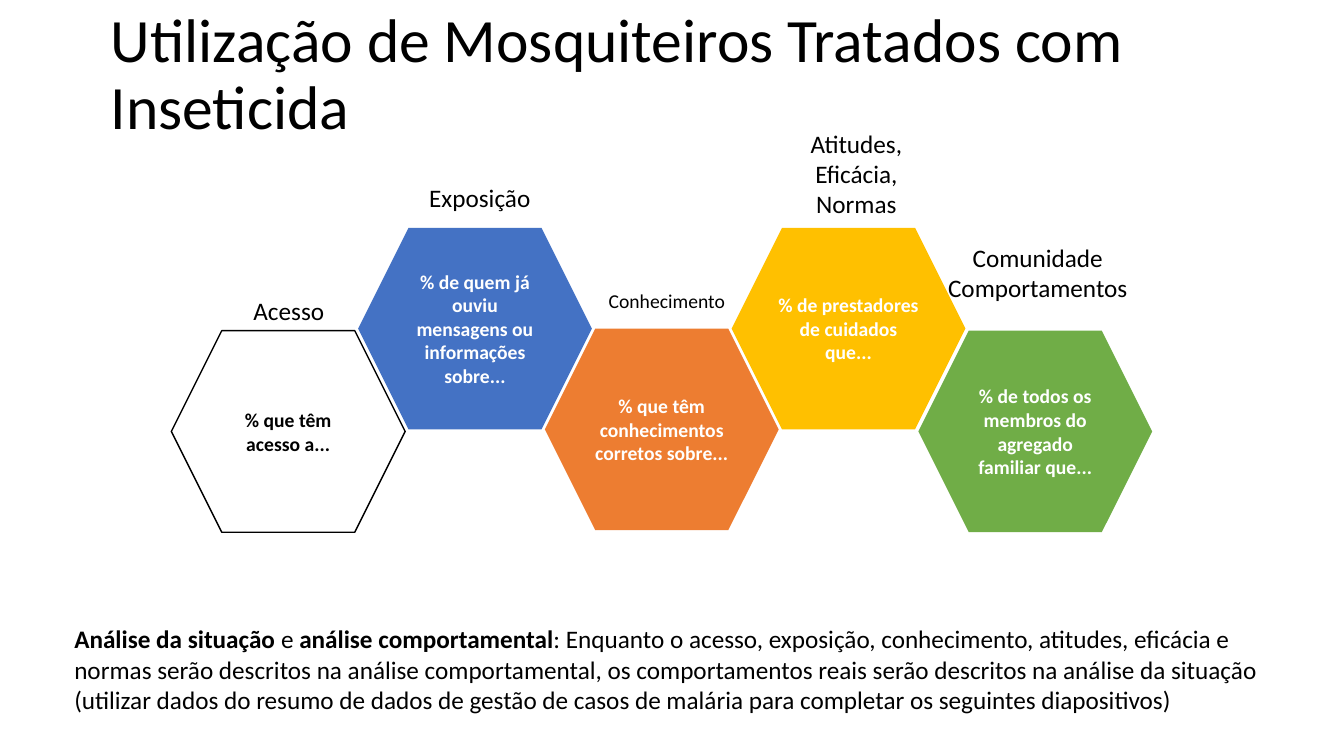
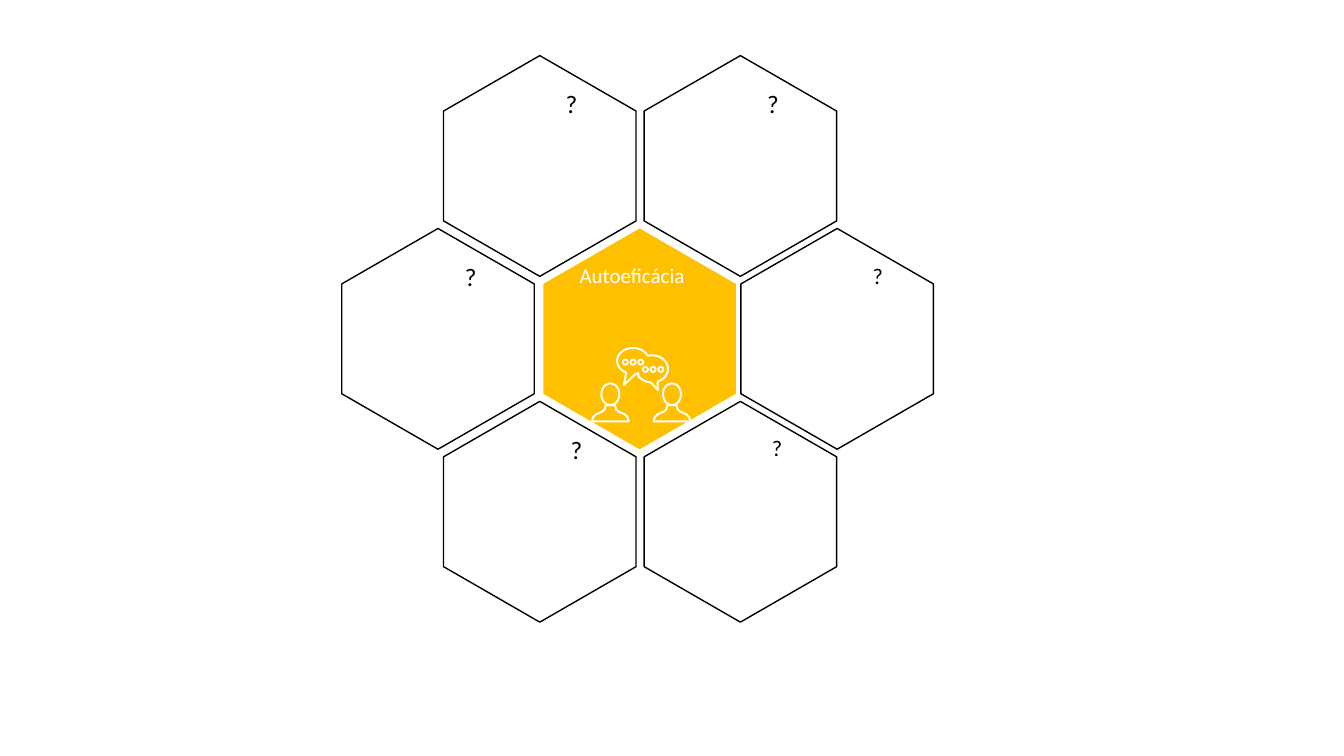
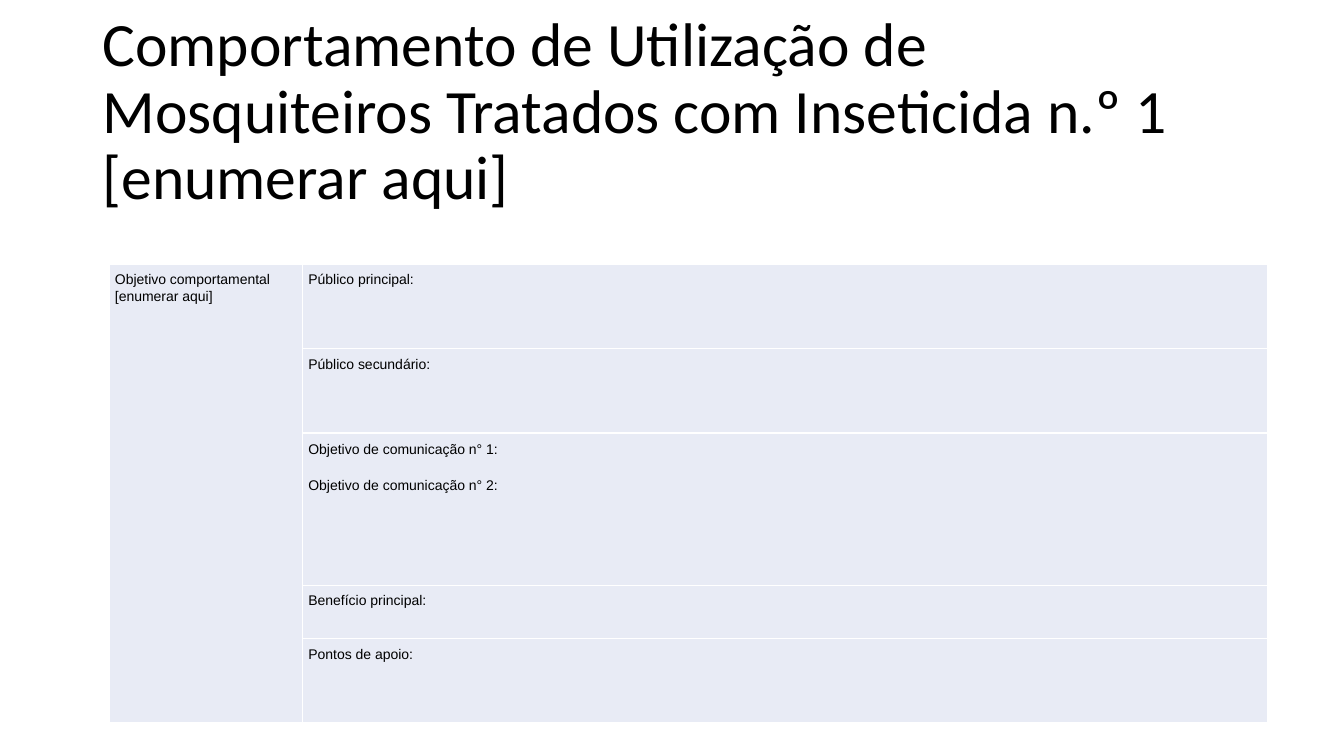
import math

import lxml.etree
import pptx
import pptx.dml.color
import pptx.enum.shapes
import pptx.enum.text
import pptx.oxml.ns
import pptx.util

Pt = pptx.util.Pt
SHAPE = pptx.enum.shapes.MSO_SHAPE
ALIGN = pptx.enum.text.PP_ALIGN
ANCHOR = pptx.enum.text.MSO_ANCHOR
COLORS = {
    "ink": "000000",
    "paper": "FFFFFF",
    "exposure": "4472C4",
    "knowledge": "ED7D31",
    "attitude": "FFC000",
    "community": "70AD47",
    "cell": "E8EBF5",
}


def rgb(name):
    return pptx.dml.color.RGBColor.from_string(COLORS[name])


def arc(cx, cy, rx, ry, start, end, steps=16):
    angles = [math.radians(start + (end - start) * i / steps) for i in range(steps + 1)]
    return [(cx + rx * math.cos(a), cy + ry * math.sin(a)) for a in angles]


class Deck:
    """Holds the shared style and the current slide."""

    def __init__(self):
        self.prs = pptx.Presentation()
        self.prs.slide_width, self.prs.slide_height = Pt(960), Pt(540)
        self.slide = None

    def new_slide(self):
        self.slide = self.prs.slides.add_slide(self.prs.slide_layouts[6])

    def style_run(self, run, size, color="ink", bold=False, font="Calibri"):
        run.font.name, run.font.size, run.font.bold = font, Pt(size), bold
        run.font.color.rgb = rgb(color)

    def fill_text(self, frame, text, size, align=ALIGN.LEFT, spacing=1.0, **style):
        frame.word_wrap = True
        frame.text = text
        for paragraph in frame.paragraphs:
            paragraph.alignment = align
            paragraph.line_spacing = spacing
            for run in paragraph.runs:
                self.style_run(run, size, **style)

    def text(self, box, text, size=18, anchor=ANCHOR.TOP, margins=None, **style):
        frame = self.slide.shapes.add_textbox(*map(Pt, box)).text_frame
        frame.vertical_anchor = anchor
        if margins:
            (frame.margin_left, frame.margin_top,
             frame.margin_right, frame.margin_bottom) = map(Pt, margins)
        self.fill_text(frame, text, size, **style)
        return frame

    def title(self, box, text):
        self.text(box, text, 44, ANCHOR.MIDDLE, spacing=0.9)

    def rich_text(self, box, pieces):
        paragraph = self.text(box, "").paragraphs[0]
        for content, bold in pieces:
            run = paragraph.add_run()
            run.text = content
            self.style_run(run, 18, bold=bold)

    def paint(self, shape, fill=None, line=None, width=1):
        shape.shadow.inherit = False
        if fill:
            shape.fill.solid()
            shape.fill.fore_color.rgb = rgb(fill)
        else:
            shape.fill.background()
        if line:
            shape.line.color.rgb = rgb(line)
            shape.line.width = Pt(width)
        else:
            shape.line.fill.background()

    def shape(self, kind, box, fill=None, line=None, width=1):
        shape = self.slide.shapes.add_shape(kind, *map(Pt, box))
        self.paint(shape, fill, line, width)
        return shape

    def hexagon(self, box, fill=None, text=None, upright=False):
        hexagon = self.shape(SHAPE.HEXAGON, box, fill, None if fill else "ink")
        if upright:
            hexagon.rotation = 90
            hexagon.adjustments[0] = 0.288
        if text:
            hexagon.text_frame.vertical_anchor = ANCHOR.MIDDLE
            self.fill_text(hexagon.text_frame, text, 14, ALIGN.CENTER,
                           color="paper" if fill else "ink", bold=True)

    def outline(self, points):
        points = [(round(x * 100), round(y * 100)) for x, y in points]
        builder = self.slide.shapes.build_freeform(*points[0], scale=Pt(1) / 100)
        builder.add_line_segments(points[1:], close=True)
        self.paint(builder.convert_to_shape(), None, "paper", 1.4)

    def person(self, left, top):
        self.shape(SHAPE.OVAL, (left + 7.6, top + 0.7, 12.8, 15.8), None, "paper", 1.4)
        half = [(10.6, 16.5), (10, 19.5), (8, 21.2), (4, 22.8), (1.8, 24.8), (0.8, 28)]
        mirrored = [(28 - x, y) for x, y in reversed(half)]
        self.outline([(left + x, top + y) for x, y in half + mirrored])

    def speech_bubbles(self):
        first, second = (452.2, 257.8, 11.4, 9.3), (465.8, 263.5, 11.4, 9.7)
        self.outline(
            arc(*first, 115, 335) + arc(*second, 255, 430)
            + [(470, 278.6)] + arc(*second, 95, 150)
            + arc(*first, 70, 80) + [(445.5, 275.2)])
        for left, top in ((444.9, 256.9), (459.2, 262.1)):
            for i in range(3):
                self.shape(SHAPE.OVAL, (left + 5.5 * i, top, 3.6, 3.6), None, "paper", 1.3)

    def cell(self, cell, text, spacing=1.06):
        cell.fill.solid()
        cell.fill.fore_color.rgb = rgb("cell")
        cell.margin_left, cell.margin_right = Pt(4.3), Pt(2.9)
        cell.margin_top = cell.margin_bottom = Pt(5)
        if text:
            self.fill_text(cell.text_frame, text, 10, font="Arial", spacing=spacing)
            for paragraph in cell.text_frame.paragraphs[1:]:
                paragraph.space_before = Pt(12.5)
        properties = cell._tc.get_or_add_tcPr()
        for index, side in enumerate(("lnL", "lnR", "lnT", "lnB")):
            line = lxml.etree.Element(pptx.oxml.ns.qn("a:" + side), w=str(Pt(1)))
            fill = lxml.etree.SubElement(line, pptx.oxml.ns.qn("a:solidFill"))
            lxml.etree.SubElement(fill, pptx.oxml.ns.qn("a:srgbClr"), val=COLORS["paper"])
            properties.insert(index, line)

    def table(self, left, top, widths, heights, heading, entries):
        table = self.slide.shapes.add_table(
            len(heights), len(widths), Pt(left), Pt(top),
            Pt(sum(widths)), Pt(sum(heights))).table
        table.first_row = table.horz_banding = False
        for column, width in zip(table.columns, widths):
            column.width = Pt(width)
        for index, (height, entry) in enumerate(zip(heights, entries)):
            table.rows[index].height = Pt(height)
            self.cell(table.cell(index, 0), "" if index else heading)
            self.cell(table.cell(index, 1), entry, 1.15 if "\n" in entry else 1.06)
        table.cell(0, 0).merge(table.cell(len(heights) - 1, 0))


def build_overview(deck):
    deck.new_slide()
    deck.title((72, 22.3, 816, 64), "Utilização de Mosquiteiros Tratados com Inseticida")
    steps = [
        (236.2, None, "% que têm acesso a..."),
        (162.7, "exposure", "% de quem já ouviu mensagens ou informações sobre..."),
        (234.8, "knowledge", "% que têm conhecimentos corretos sobre..."),
        (162.7, "attitude", "% de prestadores de cuidados que..."),
        (236.2, "community", "% de todos os membros do agregado familiar que..."),
    ]
    for index, (top, fill, text) in enumerate(steps):
        deck.hexagon((122.4 + 133.4 * index, top, 167, 144), fill, text)
    labels = [
        ((154.8, 207.4, 103, 29), "Acesso", 18, ALIGN.CENTER),
        ((299.5, 126.7, 103, 29), "Exposição", 18, ALIGN.LEFT),
        ((427.7, 203, 103, 29), "Conhecimento", 14, ALIGN.LEFT),
        ((560.2, 87.8, 103, 73), "Atitudes, Eficácia, Normas", 18, ALIGN.CENTER),
        ((648, 169.2, 186.5, 51), "Comunidade\nComportamentos", 18, ALIGN.CENTER),
    ]
    for box, text, size, align in labels:
        deck.text(box, text, size, align=align)
    deck.rich_text((46, 442, 875.5, 73), [
        ("Análise da situação", True),
        (" e ", False),
        ("análise comportamental", True),
        (": Enquanto o acesso, exposição, conhecimento, atitudes, eficácia e normas "
         "serão descritos na análise comportamental, os comportamentos reais serão "
         "descritos na análise da situação (utilizar dados do resumo de dados de gestão "
         "de casos de malária para completar os seguintes diapositivos)", False),
    ])


def build_honeycomb(deck):
    deck.new_slide()
    label = {"margins": (52.6, 0, 0, 0), "align": ALIGN.CENTER, "spacing": 0.9}
    questions = [
        (306.7, 0, 29.5, 18), (450, 0, 30.2, 18),
        (234, 1, 30.2, 18), (519.1, 1, 36, 16),
        (306.7, 2, 33.1, 18), (450, 2, 33.1, 16),
    ]
    for left, row, indent, size in questions:
        top = 49.8 + 123.5 * row
        deck.hexagon((left, top, 157.7, 137.5), upright=True)
        deck.text((left + indent, top + 15.8, 91.4, 105), "?", size, **label)
    deck.hexagon((378, 173.3, 157.7, 137.5), "attitude", upright=True)
    deck.text((356.4, 189.4, 137.5, 105), "Autoeficácia", 15, color="paper", **label)
    for left in (422, 466):
        deck.person(left, 273)
    deck.speech_bubbles()


def build_behaviour(deck):
    deck.new_slide()
    deck.title((66.2, 28.8, 828, 104.4),
               "Comportamento de Utilização de Mosquiteiros Tratados com Inseticida "
               "n.º 1 [enumerar aqui]")
    deck.table(77.8, 188.9, (138.2, 689.8), (60.2, 60.2, 108.7, 38.2, 60.2),
               "Objetivo comportamental [enumerar aqui]", [
                   "Público principal:",
                   "Público secundário:",
                   "Objetivo de comunicação n° 1:\nObjetivo de comunicação n° 2:",
                   "Benefício principal:",
                   "Pontos de apoio:",
               ])


def main():
    deck = Deck()
    build_overview(deck)
    build_honeycomb(deck)
    build_behaviour(deck)
    deck.prs.save("out.pptx")


if __name__ == "__main__":
    main()
